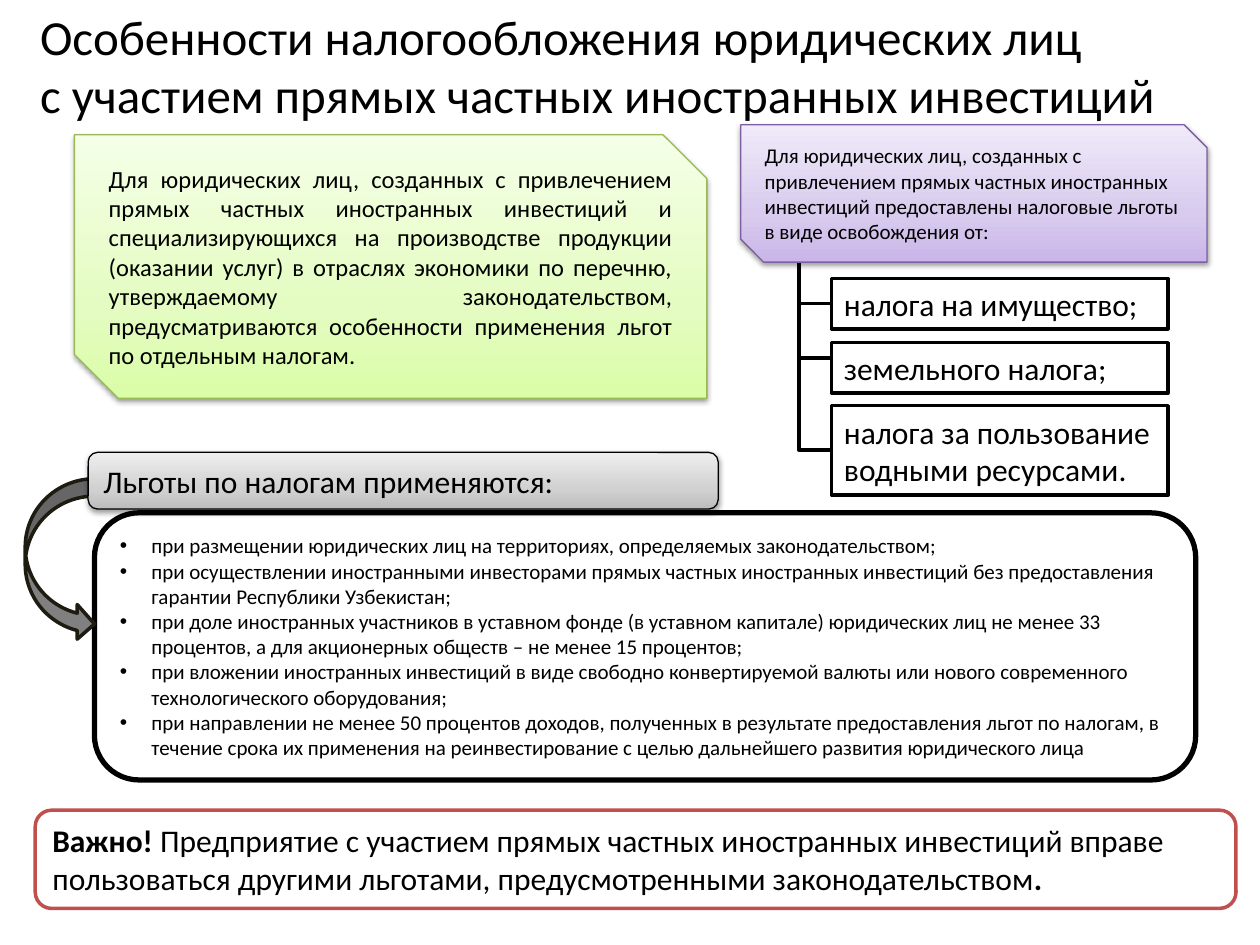
from copy import deepcopy

from lxml import etree
from pptx import Presentation
from pptx import util as u
from pptx.dml.color import RGBColor
from pptx.enum import shapes, text
from pptx.oxml.ns import qn

KIND = shapes.MSO_SHAPE
FONT = "Calibri"
BLACK, WHITE = "000000", "FFFFFF"
GREEN = ("DAFDA7", "E4FCC2", "F5FFE7")
PURPLE = ("C9B5E8", "D8CBEE", "F0EAF9")
GREY = ("BDBDBD", "D1D1D1", "EEEEEE")

TITLE = ["Особенности налогообложения юридических лиц",
         "с участием прямых частных иностранных инвестиций"]
SCOPE = ("Для юридических лиц, созданных с привлечением прямых частных иностранных инвестиций и "
         "специализирующихся на производстве продукции (оказании услуг) в отраслях экономики по "
         "перечню, утверждаемому законодательством, предусматриваются особенности применения льгот "
         "по отдельным налогам.")
EXEMPTION = ("Для юридических лиц, созданных с привлечением прямых частных иностранных инвестиций "
             "предоставлены налоговые льготы в виде освобождения от:")
TAXES = [("налога на имущество;", 2.21, 0.4, 2.41),
         ("земельного налога;", 2.72, 0.4, 2.84),
         ("налога за пользование водными ресурсами.", 3.22, 0.71, 3.57)]
CONDITIONS = [
    "при размещении юридических лиц на территориях, определяемых законодательством;",
    "при осуществлении иностранными инвесторами прямых частных иностранных инвестиций без "
    "предоставления гарантии Республики Узбекистан;",
    "при доле иностранных участников в уставном фонде (в уставном капитале) юридических лиц не "
    "менее 33 процентов, а для акционерных обществ – не менее 15 процентов;",
    "при вложении иностранных инвестиций в виде свободно конвертируемой валюты или нового "
    "современного технологического оборудования;",
    "при направлении не менее 50 процентов доходов, полученных в результате предоставления льгот "
    "по налогам, в течение срока их применения на реинвестирование с целью дальнейшего развития "
    "юридического лица",
]
WARNING = [("Важно!", True),
           (" Предприятие с участием прямых частных иностранных инвестиций вправе пользоваться "
            "другими льготами, предусмотренными законодательством", False),
           (".", True)]


def color(value):
    """Turn a hex string into a colour."""
    return RGBColor.from_string(value)


def inches(numbers):
    """Turn plain numbers into lengths."""
    return [u.Inches(number) for number in numbers]


def add_span(para, words, size, bold=False):
    """Add one run of text to a paragraph."""
    span = para.add_run()
    span.text = words
    span.font.name, span.font.size, span.font.bold = FONT, u.Pt(size), bold
    span.font.color.rgb = color(BLACK)


def set_outline(shape, line, width):
    """Set the line of a shape and drop the theme shadow."""
    shape.shadow.inherit = False
    shape.line.color.rgb = color(line)
    shape.line.width = u.Pt(width)


def add_panel(page, kind, box, fill, line, width):
    """Add a filled shape with centred, wrapped and left-aligned text space."""
    shape = page.shapes.add_shape(kind, *inches(box))
    set_outline(shape, line, width)
    shape.fill.solid()
    shape.fill.fore_color.rgb = color(fill)
    frame = shape.text_frame
    frame.word_wrap = True
    frame.vertical_anchor = text.MSO_ANCHOR.MIDDLE
    frame.paragraphs[0].alignment = text.PP_ALIGN.LEFT
    return shape


def add_raised_panel(page, kind, box, colors, line):
    """Add a panel with an upward gradient and a soft shadow below it."""
    shape = add_panel(page, kind, box, WHITE, line, 0.75)
    shape.fill.gradient()
    shape.fill.gradient_angle = 90
    properties = shape._element.spPr
    stops = properties.find(".//" + qn("a:gsLst"))
    stops.insert(1, deepcopy(stops[0]))
    for stop, value, position in zip(shape.fill.gradient_stops, colors, (0, 0.35, 1)):
        stop.color.rgb = color(value)
        stop.position = position
    shadow = etree.SubElement(properties.find(qn("a:effectLst")), qn("a:outerShdw"),
                              blurRad=str(u.Pt(3.1)), dist=str(u.Pt(1.6)),
                              dir="5400000", rotWithShape="0")
    tint = etree.SubElement(shadow, qn("a:srgbClr"), val=BLACK)
    etree.SubElement(tint, qn("a:alpha"), val="38000")
    return shape


def add_title(page, box):
    """Place the two-line title."""
    frame = page.shapes.add_textbox(*inches(box)).text_frame
    frame.word_wrap = True
    frame.vertical_anchor = text.MSO_ANCHOR.MIDDLE
    para = frame.paragraphs[0]
    add_span(para, TITLE[0], 28)
    para.add_line_break()
    add_span(para, TITLE[1], 28)


def add_scope(page, box):
    """Place the green panel on who is covered."""
    shape = add_raised_panel(page, KIND.SNIP_2_DIAG_RECTANGLE, box, GREEN, "98B955")
    para = shape.text_frame.paragraphs[0]
    para.alignment = text.PP_ALIGN.JUSTIFY
    add_span(para, SCOPE, 14)


def add_exemptions(page, box):
    """Place the purple panel and the tree of taxes hanging from it."""
    trunk, branch = box[0] + 0.46, box[0] + 0.72
    for _, _, _, joint in TAXES:
        points = [inches(point) for point in
                  ((trunk, joint - 0.95), (trunk, joint), (branch, joint))]
        builder = page.shapes.build_freeform(*points[0])
        builder.add_line_segments(points[1:], close=False)
        link = builder.convert_to_shape()
        link.fill.background()
        set_outline(link, BLACK, 2)
    head = add_raised_panel(page, KIND.SNIP_2_DIAG_RECTANGLE, box, PURPLE, "7D60A0")
    add_span(head.text_frame.paragraphs[0], EXEMPTION, 12)
    for words, top, height, _ in TAXES:
        tax = add_panel(page, KIND.RECTANGLE, (branch, top, 2.67, height), WHITE, BLACK, 2)
        add_span(tax.text_frame.paragraphs[0], words, 18)


def add_conditions(page, box):
    """Place the bulleted conditions with their heading and curved arrow."""
    left, top, _, _ = box
    frame = add_panel(page, KIND.ROUNDED_RECTANGLE, box, WHITE, BLACK, 3).text_frame
    for index, words in enumerate(CONDITIONS):
        para = frame.add_paragraph() if index else frame.paragraphs[0]
        para.alignment = text.PP_ALIGN.LEFT
        settings = para._p.get_or_add_pPr()
        settings.set("marL", str(u.Inches(0.25)))
        settings.set("indent", str(u.Inches(-0.25)))
        etree.SubElement(settings, qn("a:buFont"), typeface="Arial")
        etree.SubElement(settings, qn("a:buChar"), char="•")
        add_span(para, words, 12)
    arrow = add_panel(page, KIND.CURVED_UP_ARROW, (left - 0.92, top + 0.1, 1.29, 0.55),
                      "808080", "1E1C11", 2)
    arrow.rotation = 90
    heading = add_raised_panel(page, KIND.ROUNDED_RECTANGLE,
                               (left - 0.05, top - 0.48, 5, 0.45), GREY, BLACK)
    add_span(heading.text_frame.paragraphs[0], "Льготы по налогам применяются:", 18)


def add_warning(page, box):
    """Place the red-framed note."""
    shape = add_panel(page, KIND.ROUNDED_RECTANGLE, box, WHITE, "C0504D", 2)
    for words, bold in WARNING:
        add_span(shape.text_frame.paragraphs[0], words, 18, bold)


def main():
    """Build the slide and save it."""
    deck = Presentation()
    deck.slide_width, deck.slide_height = inches((10, 7.5))
    page = deck.slides.add_slide(deck.slide_layouts[6])
    add_conditions(page, (0.75, 4.07, 8.74, 2.12))
    add_title(page, (0.22, 0.21, 9.8, 0.61))
    add_scope(page, (0.59, 1.07, 5.02, 2.09))
    add_exemptions(page, (5.88, 0.99, 3.7, 1.09))
    add_warning(page, (0.28, 6.43, 9.53, 0.78))
    deck.save("out.pptx")


if __name__ == "__main__":
    main()
